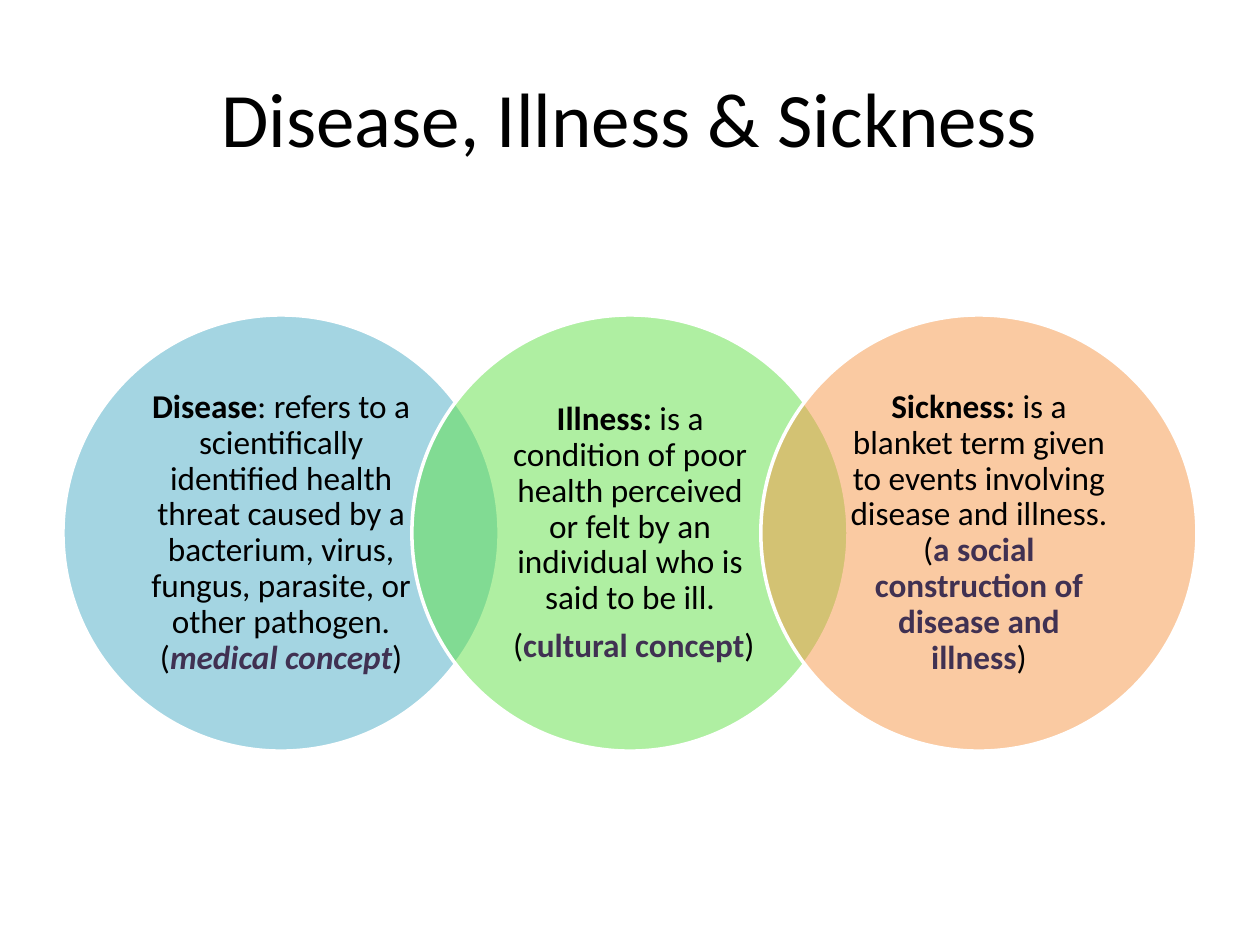
from lxml import etree
from pptx import Presentation
from pptx.dml.color import RGBColor
from pptx.enum import shapes, text
from pptx.oxml import ns
from pptx.util import Pt

FONT = "Calibri"
BLACK = RGBColor(0x00, 0x00, 0x00)
WHITE = RGBColor(0xFF, 0xFF, 0xFF)
PURPLE = RGBColor(0x40, 0x31, 0x52)
BLUE = RGBColor(0x4B, 0xAC, 0xC6)
GREEN = RGBColor(0x60, 0xE1, 0x46)
ORANGE = RGBColor(0xF7, 0x96, 0x46)

OVERLAP = 0.2  # share of a circle's width covered by its neighbour
INSET = 0.146  # share of a circle's width outside its inscribed square

# Span styles: (bold, italic, colour)
PLAIN = (False, False, BLACK)
TERM = (True, False, BLACK)
CONCEPT = (True, False, PURPLE)
MEDICAL = (True, True, PURPLE)

# Each circle: colour, then paragraphs of (wording, style) spans
CIRCLES = [
    (BLUE, [
        [("Disease", TERM),
         (": refers to a scientifically identified health threat caused by a "
          "bacterium, virus, fungus, parasite, or other pathogen. (", PLAIN),
         ("medical concept", MEDICAL), (")", PLAIN)],
    ]),
    (GREEN, [
        [("Illness:", TERM),
         (" is a condition of poor health perceived or felt by an individual "
          "who is said to be ill.", PLAIN)],
        [(" (", PLAIN), ("cultural concept", CONCEPT), (")", PLAIN)],
    ]),
    (ORANGE, [
        [("Sickness:", TERM),
         (" is a blanket term given to events involving disease and illness. (",
          PLAIN),
         ("a social construction of disease and illness", CONCEPT),
         (")", PLAIN)],
    ]),
]


def set_title(page, wording, left, top, width, height):
    title = page.shapes.title
    title.left, title.top = Pt(left), Pt(top)
    title.width, title.height = Pt(width), Pt(height)
    frame = title.text_frame
    frame.text = wording
    frame.vertical_anchor = text.MSO_ANCHOR.MIDDLE
    paragraph = frame.paragraphs[0]
    paragraph.alignment = text.PP_ALIGN.CENTER
    paragraph.font.name = FONT
    paragraph.font.size = Pt(44)
    paragraph.font.color.rgb = BLACK


def add_circle(group, colour, left, top, size):
    circle = group.shapes.add_shape(
        shapes.MSO_SHAPE.OVAL, Pt(left), Pt(top), Pt(size), Pt(size))
    circle.shadow.inherit = False
    circle.fill.solid()
    circle.fill.fore_color.rgb = colour
    fill_colour = circle.fill._xPr.find(ns.qn("a:solidFill"))[0]
    etree.SubElement(fill_colour, ns.qn("a:alpha"), val="50000")
    circle.line.color.rgb = WHITE
    circle.line.width = Pt(2)


def add_definition(group, paragraphs, left, top, size):
    box = group.shapes.add_textbox(Pt(left), Pt(top), Pt(size), Pt(size))
    frame = box.text_frame
    frame.word_wrap = True
    frame.vertical_anchor = text.MSO_ANCHOR.MIDDLE
    frame.margin_left = frame.margin_right = Pt(13.7)
    frame.margin_top = frame.margin_bottom = Pt(2)
    for index, spans in enumerate(paragraphs):
        paragraph = frame.add_paragraph() if index else frame.paragraphs[0]
        paragraph.alignment = text.PP_ALIGN.CENTER
        paragraph.line_spacing = 0.9
        paragraph.space_after = Pt(6.65)
        paragraph.font.name = FONT
        paragraph.font.size = Pt(19)
        for wording, (bold, italic, colour) in spans:
            span = paragraph.add_run()
            span.text = wording
            span.font.bold = bold
            span.font.italic = italic
            span.font.color.rgb = colour


def add_overlapping_circles(page, circles, left, top, width):
    """Spread equal circles over the width, each overlapping the next."""
    group = page.shapes.add_group_shape()
    step_share = 1 - OVERLAP
    size = width / (1 + step_share * (len(circles) - 1))
    inset = INSET * size
    for index, (colour, paragraphs) in enumerate(circles):
        x = left + index * step_share * size
        add_circle(group, colour, x, top, size)
        add_definition(group, paragraphs, x + inset, top + inset,
                       size - 2 * inset)


def main():
    deck = Presentation()
    deck.slide_width, deck.slide_height = Pt(720), Pt(540)
    page = deck.slides.add_slide(deck.slide_layouts.get_by_name("Title Only"))
    set_title(page, "Disease, Illness & Sickness", 36, 21.6, 648, 90)
    add_overlapping_circles(page, CIRCLES, 36, 180, 648)
    deck.save("out.pptx")


if __name__ == "__main__":
    main()
